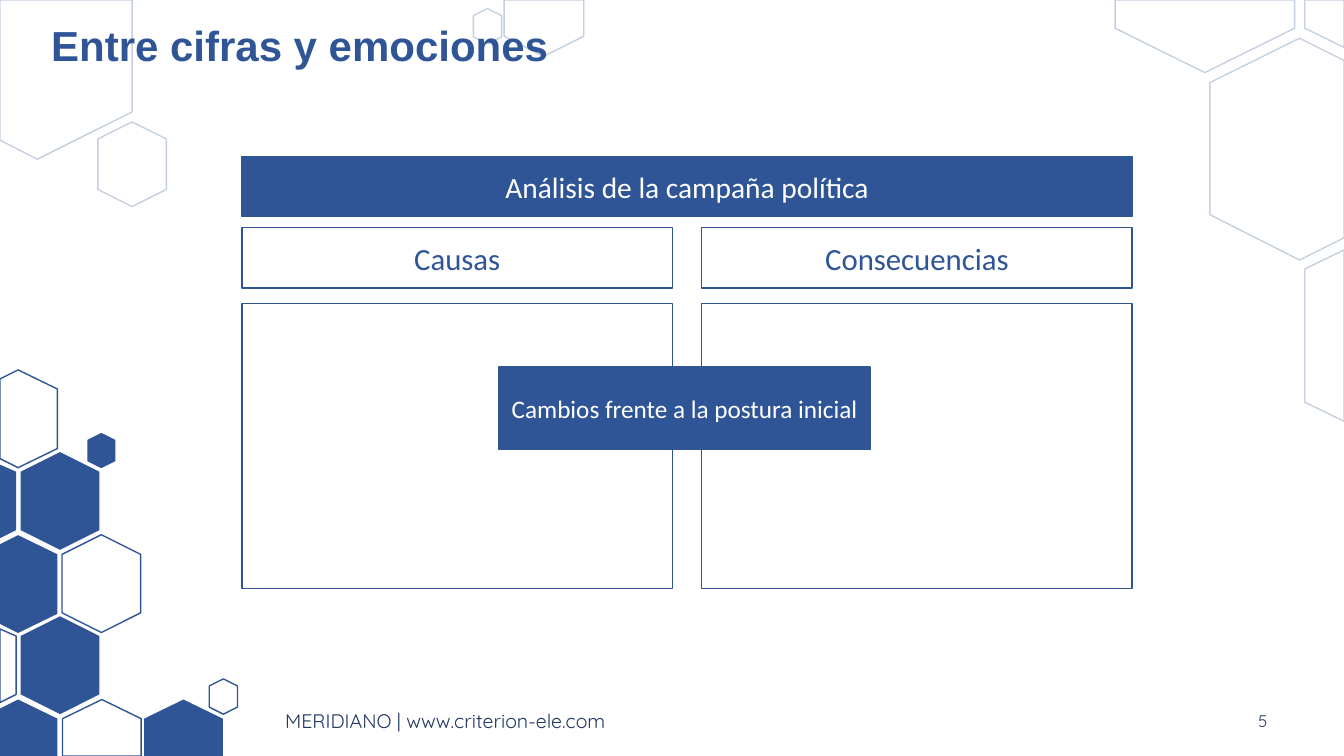
from dataclasses import dataclass

from lxml.etree import SubElement
from pptx import Presentation
from pptx.dml.color import RGBColor as Rgb
from pptx.enum.shapes import MSO_SHAPE as Shape
from pptx.enum.text import MSO_ANCHOR as Anchor, PP_ALIGN as Align
from pptx.oxml.ns import qn
from pptx.util import Pt

SCALE = 9144  # EMU in one px, 100 px to the inch


@dataclass(frozen=True)
class Theme:
    blue: str = "2F5597"
    navy: str = "203864"
    white: str = "FFFFFF"
    head: str = "Arial"
    body: str = "Calibri"
    foot: str = "Quicksand"
    title: int = 30
    label: int = 22
    banner: int = 21
    note: int = 18
    footer: int = 14
    number: int = 12
    stroke: int = 1
    faint: int = 28  # opacity of the pale cells, percent


def write(frame, text, *, size, font, color, bold=False, align=Align.LEFT, gap=None):
    frame.word_wrap = True
    frame.vertical_anchor = Anchor.MIDDLE
    para = frame.paragraphs[0]
    para.alignment = align
    para.line_spacing = gap
    run = para.add_run()
    run.text = text
    run.font.size = Pt(size)
    run.font.name = font
    run.font.bold = bold
    run.font.color.rgb = Rgb.from_string(color)


class Board:
    def __init__(self, slide, theme):
        self.shapes = slide.shapes
        self.theme = theme

    def paint(self, shape, fill=None, line=None, alpha=None):
        shape.shadow.inherit = False
        if fill:
            shape.fill.solid()
            shape.fill.fore_color.rgb = Rgb.from_string(fill)
        else:
            shape.fill.background()
        if not line:
            shape.line.fill.background()
            return
        shape.line.width = Pt(self.theme.stroke)
        shape.line.color.rgb = Rgb.from_string(line)
        if alpha:
            tint = shape.line._get_or_add_ln().find(".//" + qn("a:srgbClr"))
            SubElement(tint, qn("a:alpha")).set("val", str(alpha * 1000))

    def preset(self, kind, *box):
        return self.shapes.add_shape(kind, *(n * SCALE for n in box))

    def hexa(self, box, **look):
        shape = self.preset(Shape.HEXAGON, *box)
        shape.rotation = 90
        self.paint(shape, **look)

    def cell(self, points, **look):
        pen = self.shapes.build_freeform(*points[0], scale=SCALE)
        pen.add_line_segments(points[1:], close=True)
        self.paint(pen.convert_to_shape(), **look)

    def panel(self, box, text=None, fill=None, **form):
        shape = self.preset(Shape.RECTANGLE, *box)
        self.paint(shape, fill=fill, line=self.theme.blue)
        if text:
            write(shape.text_frame, text, font=self.theme.body,
                  align=Align.CENTER, **form)

    def label(self, box, text, **form):
        area = self.shapes.add_textbox(*(n * SCALE for n in box))
        write(area.text_frame, text, **form)


# Honeycomb cells cut off by a slide edge
def side(top):
    return [(18, top), (57, top + 19), (57, top + 78), (18, top + 97),
            (0, top + 88), (0, top + 9)]


def sliver(top):
    return [(0, top), (16, top + 7), (16, top + 65), (0, top + 73)]


def base(left):
    return [(left + 39, 694), (left + 78, 713), (left + 78, 750),
            (left, 750), (left, 713)]


def corners(board):
    theme = board.theme
    pale = dict(fill=theme.white, line=theme.blue, alpha=theme.faint)
    open_ = dict(fill=theme.white, line=theme.blue)
    full = dict(fill=theme.blue)
    small, mid, big = (35, 28), (84, 68), (97, 78)

    cells = [
        # Top and right
        (pale, [(500, 0), (579, 0), (579, 36), (539, 56), (500, 36)]),
        (pale, [(1106, 0), (1284, 0), (1284, 28), (1195, 72), (1106, 28)]),
        (pale, [(1294, 0), (1333, 0), (1333, 47), (1294, 28)]),
        (pale, [(1289, 38), (1333, 60), (1333, 236), (1289, 258),
                (1200, 213), (1200, 82)]),
        (pale, [(1333, 248), (1333, 418), (1294, 399), (1294, 267)]),
        (pale, [(0, 0), (131, 0), (131, 111), (37, 158), (0, 139)]),
        # Bottom left
        (open_, side(367)),
        (full, sliver(461)),
        (full, side(531)),
        (open_, sliver(624)),
        (full, [(18, 694), (57, 713), (57, 750), (0, 750), (0, 703)]),
        (open_, base(62)),
        (full, base(143)),
    ]
    for look, points in cells:
        board.cell(points, **look)

    whole = [
        (pale, 466, 12, small),
        (pale, 89, 129, mid),
        (full, 11, 458, big),
        (open_, 52, 540, big),
        (full, 11, 621, big),
        (open_, 204, 677, small),
        (full, 83, 433, small),
    ]
    for look, left, top, size in whole:
        board.hexa((left, top, *size), **look)


def main():
    deck = Presentation()
    deck.slide_width, deck.slide_height = 1333 * SCALE, 750 * SCALE
    theme = Theme()
    board = Board(deck.slides.add_slide(deck.slide_layouts[6]), theme)

    corners(board)

    # Title and footer
    board.label((41, 18, 1156, 60), "Entre cifras y emociones", size=theme.title,
                font=theme.head, color=theme.blue, bold=True, gap=0.9)
    board.label((273, 695, 653, 40), "MERIDIANO | www.criterion-ele.com",
                size=theme.footer, font=theme.foot, color=theme.navy)
    board.label((1168, 695, 99, 40), "5", size=theme.number, font=theme.foot,
                color=theme.navy, align=Align.RIGHT)

    # Two columns under one banner
    board.panel((240, 155, 883, 60), "Análisis de la campaña política",
                fill=theme.blue, size=theme.banner, color=theme.white)
    for left, name in ((240, "Causas"), (696, "Consecuencias")):
        board.panel((left, 226, 427, 60), name, size=theme.label, color=theme.blue)
        board.panel((left, 301, 427, 283))

    # Central note
    board.panel((495, 364, 368, 82), "Cambios frente a la postura inicial",
                fill=theme.blue, size=theme.note, color=theme.white)

    deck.save("out.pptx")


if __name__ == "__main__":
    main()
